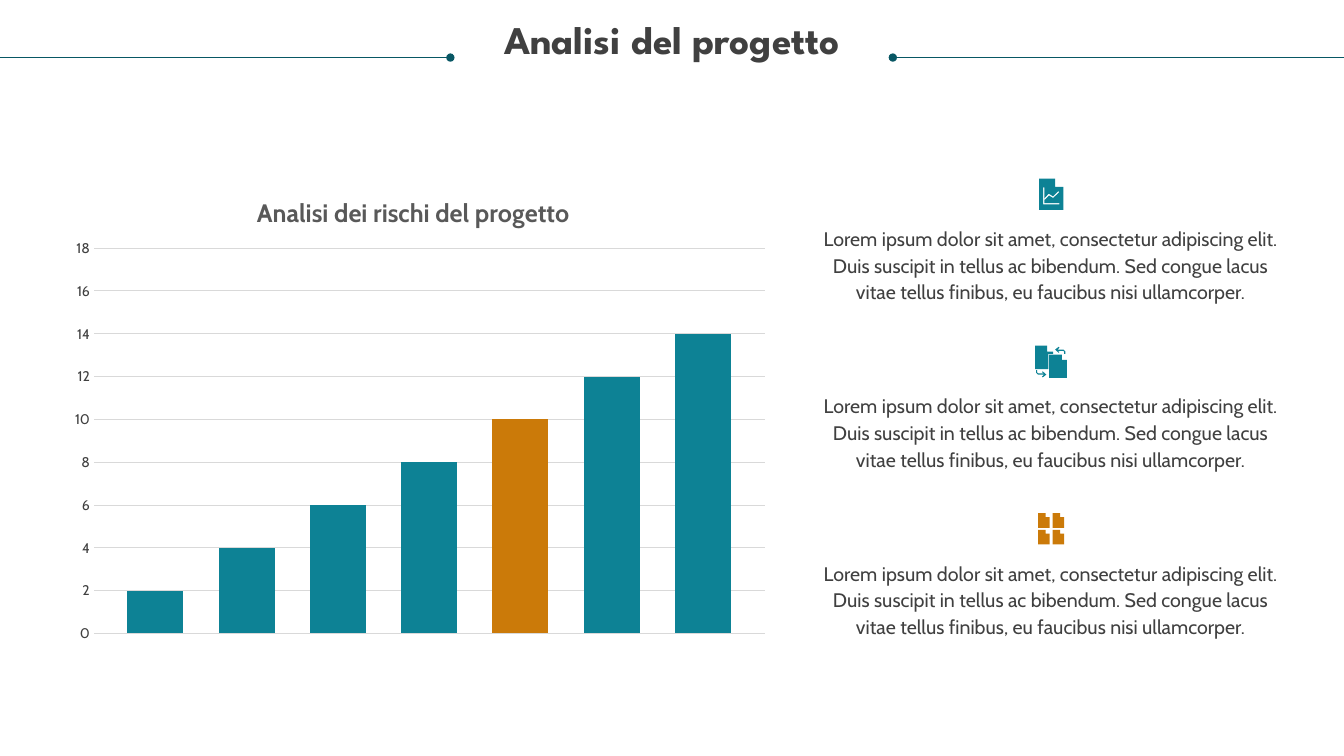
from dataclasses import dataclass

from lxml.etree import SubElement as Sub
from pptx import Presentation
from pptx.chart.data import CategoryChartData as Data
from pptx.dml.color import RGBColor
from pptx.enum.chart import XL_CHART_TYPE as Kind, XL_TICK_MARK as Tick
from pptx.enum.shapes import MSO_CONNECTOR as Link
from pptx.enum.text import PP_ALIGN as Align
from pptx.oxml import parse_xml
from pptx.oxml.ns import nsdecls, qn
from pptx.util import Cm, Pt

TEAL = RGBColor(0x0D, 0x82, 0x95)
AMBER = RGBColor(0xCB, 0x7A, 0x09)
DEEP = RGBColor(0x08, 0x57, 0x64)
INK = RGBColor(0x40, 0x40, 0x40)
GREY = RGBColor(0x59, 0x59, 0x59)
PALE = RGBColor(0xD9, 0xD9, 0xD9)
BODY = "Cabin"
HEAD = "League Spartan"
LOREM = (
    "Lorem ipsum dolor sit amet, consectetur adipiscing elit. "
    "Duis suscipit in tellus ac bibendum. Sed congue lacus "
    "vitae tellus finibus, eu faucibus nisi ullamcorper."
)
WIDE, HIGH = 33.87, 19.05

Ring = list[tuple[float, float]]


@dataclass
class Text:
    words: str
    left: float
    top: float
    width: float
    height: float
    font: str
    size: float
    bold: bool
    space: float | Pt


@dataclass
class Rule:
    dot: float
    edge: float


@dataclass
class Icon:
    color: RGBColor
    forms: list[list[Ring]]


@dataclass
class Bar:
    value: int
    color: RGBColor


def page(x: float, y: float, w: float, h: float, fold: float) -> Ring:
    bend = x + w - fold
    return [(x, y), (bend, y), (bend, y + fold), (x + w, y + fold),
            (x + w, y + h), (x, y + h)]


def style(font, name: str, size: float, color: RGBColor, bold: bool) -> None:
    font.name, font.size, font.bold = name, Pt(size), bold
    font.color.rgb = color


def draw_text(shapes, text: Text) -> None:
    box = shapes.add_textbox(Cm(text.left), Cm(text.top), Cm(text.width), Cm(text.height))
    frame = box.text_frame
    frame.word_wrap = True
    frame.margin_left = frame.margin_right = frame.margin_top = frame.margin_bottom = 0
    para = frame.paragraphs[0]
    para.alignment = Align.CENTER
    para.line_spacing = text.space
    run = para.add_run()
    run.text = text.words
    style(run.font, text.font, text.size, INK, text.bold)


def draw_rule(shapes, rule: Rule) -> None:
    y = Cm(1.45)
    line = shapes.add_connector(Link.STRAIGHT, Cm(rule.dot), y, Cm(rule.edge), y)
    line.line.color.rgb = DEEP
    line.line.width = Pt(0.5)
    Sub(line.line._get_or_add_ln(), qn("a:headEnd"), type="oval")
    Sub(line._element.spPr, qn("a:effectLst"))


def draw_icon(shapes, icon: Icon) -> None:
    if len(icon.forms) > 1:
        shapes = shapes.add_group_shape().shapes
    for rings in icon.forms:
        grids = [[(Cm(x), Cm(y)) for x, y in ring] for ring in rings]
        pen = shapes.build_freeform(*grids[0][0])
        pen.add_line_segments(grids[0][1:])
        for grid in grids[1:]:
            pen.move_to(*grid[0])
            pen.add_line_segments(grid[1:])
        shape = pen.convert_to_shape()
        shape.shadow.inherit = False
        shape.fill.solid()
        shape.fill.fore_color.rgb = icon.color
        shape.line.fill.background()


def place(node, spot: int, **sides: float) -> None:
    old = node.find(qn("c:layout"))
    if old is not None:
        node.remove(old)
    modes = {"xMode": "edge", "yMode": "edge"}
    if "w" in sides:
        modes = {"layoutTarget": "inner", **modes}
    rows = "".join(f'<c:{key} val="{val}"/>' for key, val in {**modes, **sides}.items())
    node.insert(spot, parse_xml(
        f'<c:layout {nsdecls("c")}><c:manualLayout>{rows}</c:manualLayout></c:layout>'))


def draw_chart(shapes, bars: list[Bar]) -> None:
    data = Data()
    data.categories = ["1"]
    for num, bar in enumerate(bars, 1):
        data.add_series(f"Series {num}", [bar.value])
    chart = shapes.add_chart(Kind.COLUMN_CLUSTERED, Cm(1.45), Cm(4.19),
                             Cm(18.19), Cm(12.14), data).chart
    style(chart.font, BODY, 10, INK, False)
    chart.has_legend = False
    title = chart.chart_title
    run = title.text_frame.paragraphs[0].add_run()
    run.text = "Analisi dei rischi del progetto"
    style(run.font, BODY, 18, GREY, True)
    place(title._element, 1, x=0.27, y=0.05)
    place(chart._chartSpace.chart.plotArea, 0, x=0.05, y=0.17, w=0.93, h=0.8)
    plot = chart.plots[0]
    plot.gap_width, plot.overlap = 121, -63
    plot.vary_by_categories = False
    for row, bar in zip(plot.series, bars):
        row.format.fill.solid()
        row.format.fill.fore_color.rgb = bar.color
    chart.category_axis.visible = False
    axis = chart.value_axis
    axis.minimum_scale, axis.maximum_scale, axis.major_unit = 0, 18, 2
    axis.major_tick_mark = axis.minor_tick_mark = Tick.NONE
    axis.format.line.fill.background()
    style(axis.tick_labels.font, BODY, 10, INK, False)
    grid = axis.major_gridlines.format.line
    grid.color.rgb = PALE
    grid.width = Pt(0.75)


AXES = [(26.29, 4.72), (26.32, 4.72), (26.32, 5.12), (26.7, 5.12),
        (26.7, 5.15), (26.29, 5.15)]
TREND = [(26.32, 5), (26.43, 4.88), (26.54, 4.95), (26.67, 4.82),
         (26.7, 4.84), (26.54, 4.99), (26.44, 4.93), (26.32, 5.05)]
BACK = [(26.09, 8.71), (26.39, 8.71), (26.39, 8.86), (26.54, 8.86),
        (26.54, 8.92), (26.42, 8.92), (26.42, 9.3), (26.09, 9.3)]
ARROW = [(26.59, 8.81), (26.68, 8.74), (26.7, 8.76), (26.65, 8.81),
         (26.8, 8.81), (26.85, 8.86), (26.85, 8.92), (26.82, 8.92),
         (26.82, 8.86), (26.79, 8.84), (26.65, 8.84), (26.7, 8.87), (26.68, 8.89)]
TURNED = [(52.96 - x, 18.25 - y) for x, y in ARROW]

ICONS = [
    Icon(TEAL, [[page(26.19, 4.5, 0.61, 0.79, 0.21), AXES, TREND]]),
    Icon(TEAL, [[BACK], [page(26.44, 8.94, 0.45, 0.58, 0.13)], [ARROW], [TURNED]]),
    Icon(AMBER, [[page(26.16 + 0.37 * col, 12.93 + 0.42 * row, 0.29, 0.37, 0.1)]
                 for row in range(2) for col in range(2)]),
]
RULES = [Rule(11.35, 0), Rule(22.5, WIDE)]
BARS = [Bar(num, AMBER if num == 10 else TEAL) for num in range(2, 15, 2)]
TEXTS = [Text("Analisi del progetto", 0.64, 0.53, 32.59, 1.85, HEAD, 28, True, 0.9)] + [
    Text(LOREM, 20.55, 5.64 + 4.22 * row, 11.86, 1.98, BODY, 14, False, Pt(19))
    for row in range(3)
]


def main() -> None:
    deck = Presentation()
    deck.slide_width, deck.slide_height = Cm(WIDE), Cm(HIGH)
    shapes = deck.slides.add_slide(deck.slide_layouts[6]).shapes
    for rule in RULES:
        draw_rule(shapes, rule)
    draw_chart(shapes, BARS)
    for text in TEXTS:
        draw_text(shapes, text)
    for icon in ICONS:
        draw_icon(shapes, icon)
    deck.save("out.pptx")


if __name__ == "__main__":
    main()
